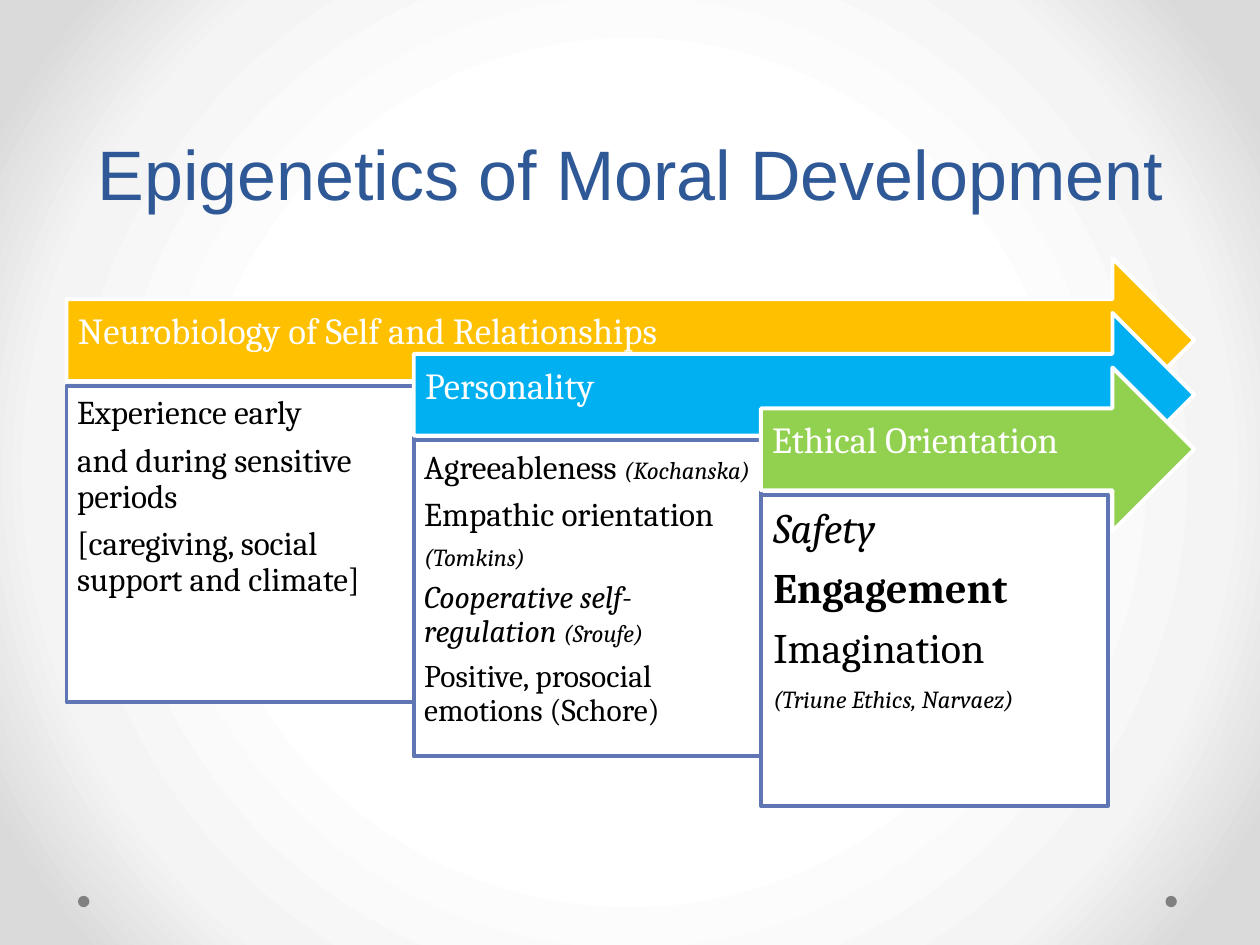
from lxml.etree import SubElement
from pptx import Presentation
from pptx.dml.color import RGBColor
from pptx.enum.shapes import MSO_SHAPE
from pptx.enum.text import MSO_ANCHOR, PP_ALIGN
from pptx.oxml.ns import qn
from pptx.util import Pt

COLORS = {
    "title": "2F5897", "white": "FFFFFF", "black": "000000",
    "border": "6076B4", "dot": "808080",
    "gold": "FFC000", "blue": "00B0F0", "green": "92D050",
}
BACKGROUND_STOPS = [(50, "FFFFFF"), (76, "F4F4F4"), (92, "DADADA")]
TITLE = "Epigenetics of Moral Development"

# Each paragraph is a list of spans: (text, size, style)
STAGES = [
    {"heading": "Neurobiology of Self and Relationships", "color": "gold",
     "height": 180.7, "inset": 6, "details": [
         [("Experience early", 19, "")],
         [("and during sensitive periods", 19, "")],
         [("[caregiving, social support and climate]", 19, "")]]},
    {"heading": "Personality", "color": "blue",
     "height": 180.7, "inset": 6, "details": [
         [("Agreeableness ", 19, ""), ("(Kochanska)", 14, "italic")],
         [("Empathic orientation", 19, "")],
         [("(Tomkins)", 14, "italic")],
         [("Cooperative self-regulation ", 18, "italic"),
          ("(Sroufe)", 14, "italic")],
         [("Positive, prosocial emotions (Schore)", 18, "")]]},
    {"heading": "Ethical Orientation", "color": "green",
     "height": 177.8, "inset": 7.2, "details": [
         [("Safety", 24, "italic")],
         [("Engagement", 24, "bold")],
         [("Imagination", 24, "")],
         [("(Triune Ethics, Narvaez)", 14, "italic")]]},
]

LEFT, TOP, RIGHT = 38, 147.6, 682.5
STEP_X, STEP_Y = 198.4, 31.2
ARROW_HEIGHT, BOX_OFFSET = 93.6, 72.7


def color(name):
    return RGBColor.from_string(COLORS[name])


def write(shape, paragraphs, *, font="Cambria", ink="black", insets=(0, 0, 0, 0),
          anchor=MSO_ANCHOR.TOP, align=PP_ALIGN.LEFT, line_spacing=0.9, gap=0.35):
    frame = shape.text_frame
    frame.word_wrap = True
    frame.vertical_anchor = anchor
    (frame.margin_left, frame.margin_top,
     frame.margin_right, frame.margin_bottom) = map(Pt, insets)
    for number, spans in enumerate(paragraphs):
        para = frame.add_paragraph() if number else frame.paragraphs[0]
        para.alignment = align
        para.line_spacing = line_spacing
        para.space_before = Pt(0)
        para.space_after = Pt(round(gap * max(size for _, size, _ in spans), 2))
        for text, size, style in spans:
            span = para.add_run()
            span.text = text
            span.font.name = font
            span.font.size = Pt(size)
            span.font.bold = style == "bold"
            span.font.italic = style == "italic"
            span.font.color.rgb = color(ink)


def add_shape(page, kind, left, top, width, height, fill, line=None):
    shape = page.shapes.add_shape(kind, Pt(left), Pt(top), Pt(width), Pt(height))
    shape.shadow.inherit = False
    shape.fill.solid()
    shape.fill.fore_color.rgb = color(fill)
    if line:
        shape.line.color.rgb = color(line)
        shape.line.width = Pt(2.25)
    else:
        shape.line.fill.background()
    return shape


def paint_background(page):
    page.background.fill.gradient()
    gradient = page.element.find(".//" + qn("a:gradFill"))
    for child in list(gradient):
        gradient.remove(child)
    stops = SubElement(gradient, qn("a:gsLst"))
    for position, value in BACKGROUND_STOPS:
        stop = SubElement(stops, qn("a:gs"), pos=str(position * 1000))
        SubElement(stop, qn("a:srgbClr"), val=value)
    circle = SubElement(gradient, qn("a:path"))
    circle.set("path", "circle")
    SubElement(circle, qn("a:fillToRect"),
               {side: "50000" for side in "ltrb"})


def add_stage(page, index, stage):
    left, top = LEFT + index * STEP_X, TOP + index * STEP_Y
    arrow = add_shape(page, MSO_SHAPE.RIGHT_ARROW, left, top, RIGHT - left,
                      ARROW_HEIGHT, stage["color"], "white")
    write(arrow, [[(stage["heading"], 21, "")]], ink="white",
          insets=(6.5, 6.5, 20, 15), anchor=MSO_ANCHOR.MIDDLE)
    box = add_shape(page, MSO_SHAPE.RECTANGLE, left, top + BOX_OFFSET, STEP_X,
                    stage["height"], "white", "border")
    write(box, stage["details"], insets=(stage["inset"],) * 4)


def main():
    deck = Presentation()
    deck.slide_width, deck.slide_height = Pt(720), Pt(540)
    page = deck.slides.add_slide(deck.slide_layouts[5])
    paint_background(page)

    # Corner dots
    for left in (44.6, 666):
        add_shape(page, MSO_SHAPE.OVAL, left, 511.9, 6.5, 6.5, "dot")

    # Title
    title = page.shapes.title
    title.left, title.top, title.width, title.height = map(Pt, (36, 0, 648, 126))
    write(title, [[(TITLE, 40, "")]], font="Arial", ink="title",
          insets=(7.2, 3.6, 7.2, 3.6), anchor=MSO_ANCHOR.BOTTOM,
          align=PP_ALIGN.CENTER, line_spacing=Pt(58), gap=0)

    # Overlapping arrows, each with its details
    for index, stage in enumerate(STAGES):
        add_stage(page, index, stage)

    deck.save("out.pptx")


if __name__ == "__main__":
    main()
